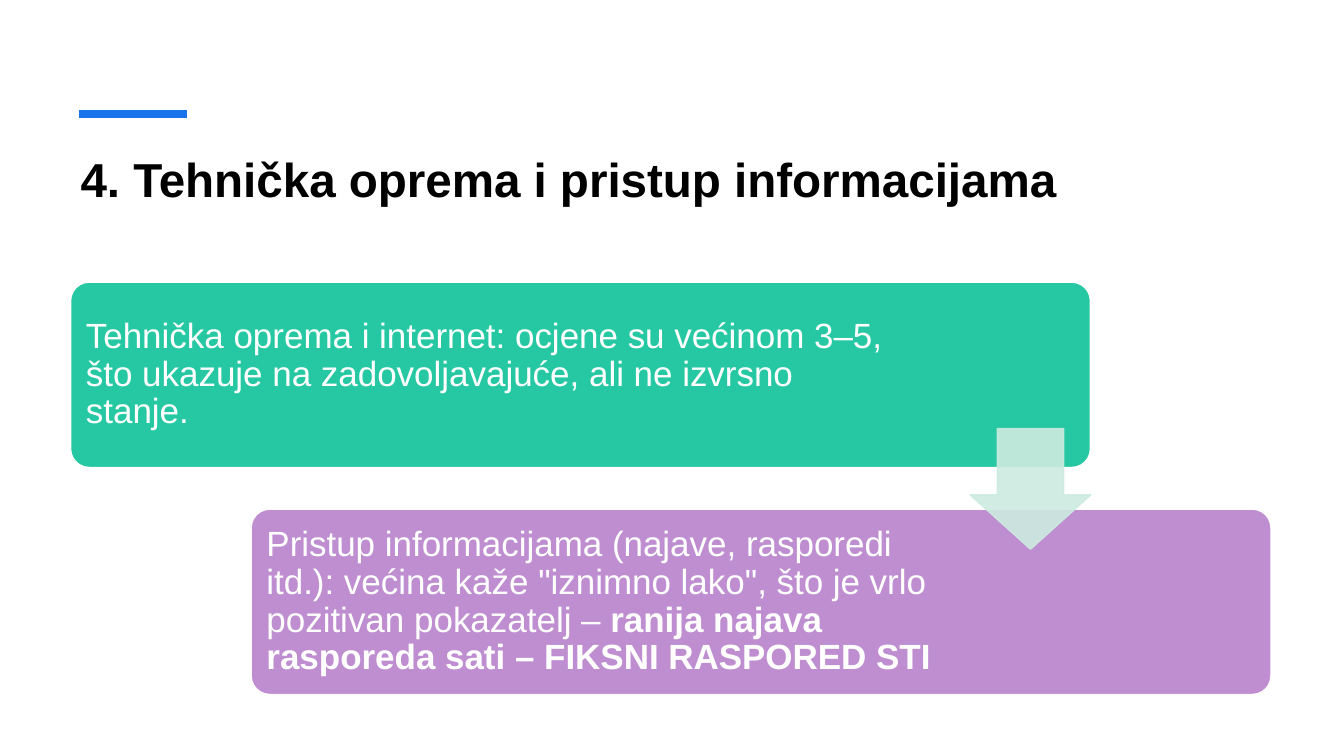
"""Build the slide on technical equipment and access to information."""
from lxml import etree
from pptx import Presentation
from pptx.dml.color import RGBColor
from pptx.enum.shapes import MSO_CONNECTOR, MSO_SHAPE
from pptx.enum.text import MSO_ANCHOR, PP_ALIGN
from pptx.oxml.ns import qn
from pptx.util import Cm, Pt

BLACK = RGBColor(0x00, 0x00, 0x00)
WHITE = RGBColor(0xFF, 0xFF, 0xFF)
BLUE = RGBColor(0x19, 0x73, 0xEB)
GREEN = RGBColor(0x25, 0xC8, 0xA2)
PURPLE = RGBColor(0xBF, 0x8E, 0xD1)
MINT = RGBColor(0xCD, 0xEB, 0xE0)


def add_run(p, text, size, color, bold=False):
    r = p.add_run()
    r.text = text
    r.font.name = "Arial"
    r.font.size = Pt(size)
    r.font.bold = bold
    r.font.color.rgb = color


prs = Presentation()
prs.slide_width, prs.slide_height = Cm(33.87), Cm(19.05)
s = prs.slides.add_slide(prs.slide_layouts[6])

title = s.shapes.add_textbox(Cm(1.78), Cm(3.81), Cm(30.25), Cm(3.05))
title.text_frame.word_wrap = True
p = title.text_frame.paragraphs[0]
p.line_spacing = 0.9
add_run(p, "4. Tehnička oprema i pristup informacijama", 34, BLACK, True)

accent = s.shapes.add_connector(MSO_CONNECTOR.STRAIGHT, Cm(2), Cm(2.87), Cm(4.72), Cm(2.87))
accent.line.color.rgb = BLUE
accent.line.width = Pt(6)
etree.SubElement(accent._element.spPr, qn("a:effectLst"))

steps = [
    (GREEN, 4.83, [("Tehnička oprema i internet: ocjene su većinom 3–5, što ukazuje "
                    "na zadovoljavajuće, ali ne izvrsno stanje.", False)]),
    (PURPLE, 7.85, [("Pristup informacijama (najave, rasporedi itd.): većina kaže "
                     "\"iznimno lako\", što je vrlo pozitivan pokazatelj – ", False),
                    ("ranija najava rasporeda sati – FIKSNI RASPORED STI", True)]),
]
for i, (color, right_margin, parts) in enumerate(steps):
    sp = s.shapes.add_shape(MSO_SHAPE.ROUNDED_RECTANGLE, Cm(1.78 + 4.55 * i),
                            Cm(7.11 + 5.72 * i), Cm(25.7), Cm(4.67))
    sp.adjustments[0] = 0.1
    sp.shadow.inherit = False
    sp.fill.solid()
    sp.fill.fore_color.rgb = color
    sp.line.color.rgb = WHITE
    sp.line.width = Pt(1)
    tf = sp.text_frame
    tf.word_wrap = True
    tf.vertical_anchor = MSO_ANCHOR.MIDDLE
    tf.margin_left = tf.margin_top = tf.margin_bottom = Cm(0.25)
    tf.margin_right = Cm(right_margin)
    p = tf.paragraphs[0]
    p.alignment = PP_ALIGN.LEFT
    p.line_spacing = 0.9
    for text, bold in parts:
        add_run(p, text, 25, WHITE, bold)

arrow = s.shapes.add_shape(MSO_SHAPE.DOWN_ARROW, Cm(24.45), Cm(10.8), Cm(3.04), Cm(3.04))
arrow.adjustments[0] = 0.55
arrow.adjustments[1] = 0.45
arrow.shadow.inherit = False
arrow.fill.solid()
arrow.fill.fore_color.rgb = MINT
arrow.line.color.rgb = MINT
arrow.line.width = Pt(1)
for clr in arrow._element.spPr.iter(qn("a:srgbClr")):
    etree.SubElement(clr, qn("a:alpha"), val="90000")

prs.save("out.pptx")
